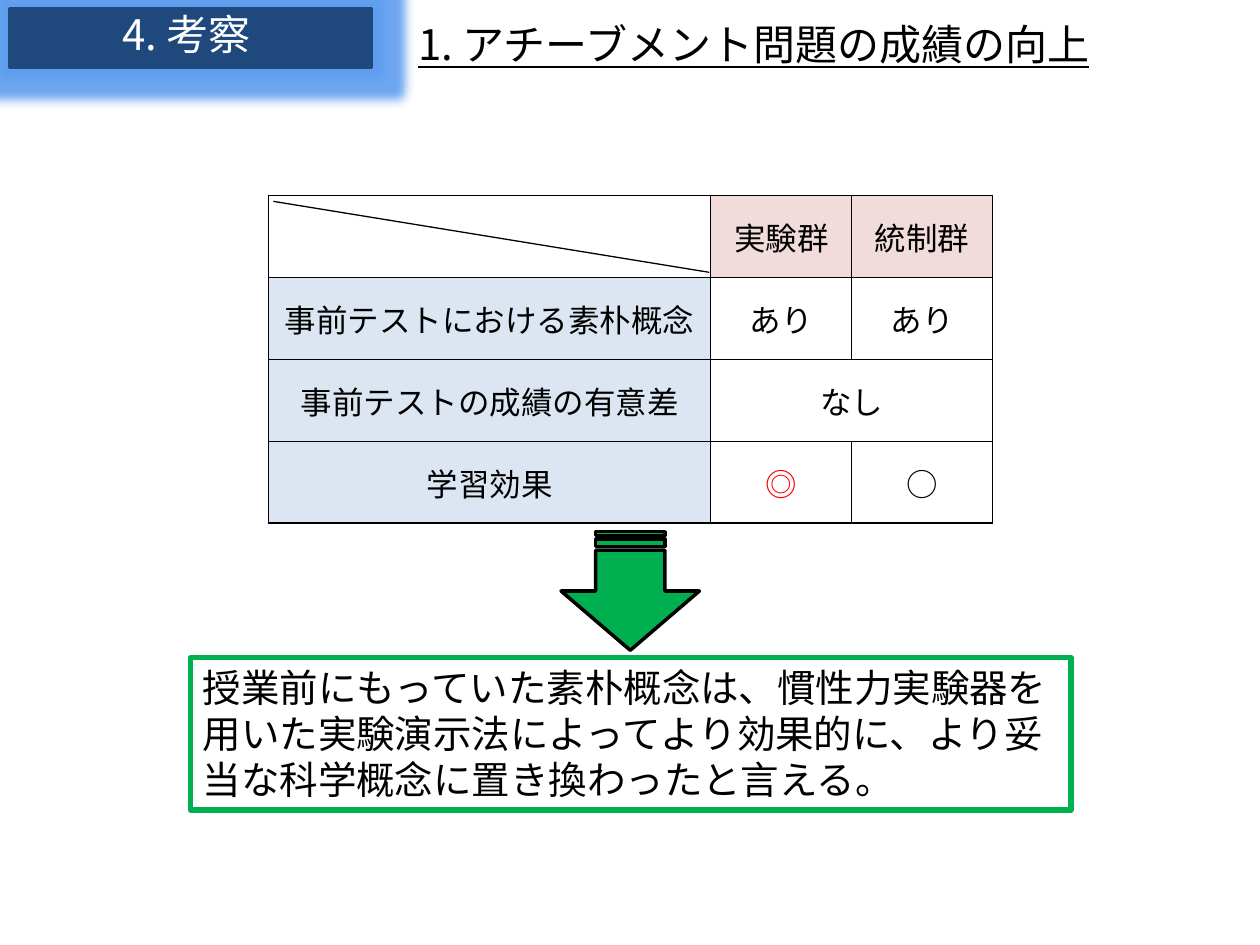
from dataclasses import dataclass
from typing import Any

from lxml.etree import SubElement
from pptx import Presentation
from pptx.dml.color import RGBColor
from pptx.enum.shapes import MSO_CONNECTOR, MSO_SHAPE
from pptx.enum.text import MSO_ANCHOR, MSO_AUTO_SIZE, PP_ALIGN
from pptx.oxml import parse_xml
from pptx.oxml.ns import nsdecls, qn
from pptx.util import Cm, Pt

FONT = "Noto Sans CJK JP"
BLACK, WHITE, RED = "000000", "FFFFFF", "FF0000"
NAVY, GLOW, GREEN = "1F497D", "5E9EEF", "00B050"
PINK, PALE_BLUE = "F2DCDB", "DCE6F2"
COLUMN_WIDTHS = (8.92, 2.84, 2.84)
ROW_HEIGHT = 1.65


@dataclass(frozen=True)
class Box:
    left: float
    top: float
    width: float
    height: float

    def lengths(self) -> tuple:
        return Cm(self.left), Cm(self.top), Cm(self.width), Cm(self.height)


@dataclass(frozen=True)
class TableCell:
    text: str = ""
    fill: str | None = None
    color: str = BLACK


TABLE_ROWS = (
    (TableCell(), TableCell("実験群", PINK), TableCell("統制群", PINK)),
    (TableCell("事前テストにおける素朴概念", PALE_BLUE), TableCell("あり"), TableCell("あり")),
    (TableCell("事前テストの成績の有意差", PALE_BLUE), TableCell("なし"), TableCell()),
    (TableCell("学習効果", PALE_BLUE), TableCell("◎", color=RED), TableCell("○")),
)


def rgb(color: str) -> RGBColor:
    return RGBColor.from_string(color)


def set_attributes(target: Any, values: dict[str, Any]) -> None:
    for name, value in values.items():
        setattr(target, name, value)


def write_text(frame: Any, lines: tuple[str, ...], size: float, color: str = BLACK,
               alignment: Any = PP_ALIGN.LEFT, underline: bool = False) -> None:
    for index, line in enumerate(lines):
        paragraph = frame.add_paragraph() if index else frame.paragraphs[0]
        paragraph.alignment = alignment
        run = paragraph.add_run()
        run.text = line
        set_attributes(run.font, {"name": FONT, "size": Pt(size), "underline": underline})
        run.font.color.rgb = rgb(color)
        SubElement(run.font._element, qn("a:ea")).set("typeface", FONT)


def add_shape(shapes: Any, kind: Any, box: Box, fill: str | None, line: str, width: float) -> Any:
    shape = shapes.add_shape(kind, *box.lengths())
    shape.shadow.inherit = False
    if fill:
        shape.fill.solid()
        shape.fill.fore_color.rgb = rgb(fill)
    else:
        shape.fill.background()
    shape.line.color.rgb = rgb(line)
    shape.line.width = Pt(width)
    return shape


def add_section_label(slide: Any, text: str) -> None:
    group = slide.shapes.add_group_shape()
    banner = add_shape(group.shapes, MSO_SHAPE.RECTANGLE, Box(0.2, 0.18, 7.29, 1.17), NAVY, NAVY, 2)
    effects = banner._element.spPr.find(qn("a:effectLst"))
    effects.append(parse_xml(
        f'<a:glow {nsdecls("a")} rad="{Pt(12)}"><a:srgbClr val="{GLOW}">'
        '<a:alpha val="90000"/></a:srgbClr></a:glow>'))
    label = group.shapes.add_textbox(*Box(0.3, 0.05, 6.91, 1.3).lengths())
    label.text_frame.word_wrap = True
    write_text(label.text_frame, (text,), 24, WHITE, PP_ALIGN.CENTER)


def add_heading(slide: Any, text: str) -> None:
    title = slide.shapes.title
    set_attributes(title, dict(zip(("left", "top", "width", "height"),
                                   Box(8.18, 0.25, 15.04, 1.27).lengths())))
    set_attributes(title.text_frame, {"word_wrap": True, "auto_size": MSO_AUTO_SIZE.NONE,
                                      "vertical_anchor": MSO_ANCHOR.TOP})
    write_text(title.text_frame, (text,), 24, underline=True)


def set_borders(cell: Any, widths: dict[str, float]) -> None:
    """Put the border lines ahead of the fill, as the schema requires."""
    properties = cell._tc.get_or_add_tcPr()
    for index, (side, width) in enumerate(widths.items()):
        properties.insert(index, parse_xml(
            f'<a:ln{side} {nsdecls("a")} w="{Pt(width)}"><a:solidFill>'
            f'<a:srgbClr val="{BLACK}"/></a:solidFill></a:ln{side}>'))


def add_comparison_table(slide: Any) -> None:
    row_count, column_count = len(TABLE_ROWS), len(COLUMN_WIDTHS)
    box = Box(5.41, 3.94, sum(COLUMN_WIDTHS), ROW_HEIGHT * row_count)
    table = slide.shapes.add_table(row_count, column_count, *box.lengths()).table
    set_attributes(table, {"first_row": False, "horz_banding": False})
    for column, width in zip(table.columns, COLUMN_WIDTHS):
        column.width = Cm(width)
    table.cell(2, 1).merge(table.cell(2, 2))
    for row, contents in enumerate(TABLE_ROWS):
        table.rows[row].height = Cm(ROW_HEIGHT)
        for column, content in enumerate(contents):
            cell = table.cell(row, column)
            if content.fill:
                cell.fill.solid()
                cell.fill.fore_color.rgb = rgb(content.fill)
            else:
                cell.fill.background()
            set_attributes(cell, {"vertical_anchor": MSO_ANCHOR.MIDDLE, "margin_left": Cm(0.03),
                                  "margin_top": Cm(0.03), "margin_right": Cm(0.03),
                                  "margin_bottom": 0})
            if content.text:
                write_text(cell.text_frame, (content.text,), 18, content.color, PP_ALIGN.CENTER)
            span = cell.span_width if cell.is_merge_origin else 1
            outer = {"L": column == 0, "R": column + span == column_count,
                     "T": row == 0, "B": row == row_count - 1}
            set_borders(cell, {side: 1 if edge else 0.5 for side, edge in outer.items()})


def add_diagonal(slide: Any) -> None:
    line = slide.shapes.add_connector(MSO_CONNECTOR.STRAIGHT, Cm(5.51), Cm(4.06), Cm(14.3), Cm(5.49))
    line.line.color.rgb = rgb(BLACK)
    line.line.width = Pt(0.75)
    SubElement(line._element.spPr, qn("a:effectLst"))


def add_conclusion(slide: Any, lines: tuple[str, ...]) -> None:
    arrow = add_shape(slide.shapes, MSO_SHAPE.STRIPED_RIGHT_ARROW,
                      Box(11.51, 10.52, 2.39, 2.79), GREEN, BLACK, 2)
    arrow.rotation = 90
    frame = add_shape(slide.shapes, MSO_SHAPE.RECTANGLE,
                      Box(3.84, 13.26, 17.75, 3.07), None, GREEN, 3).text_frame
    set_attributes(frame, {"word_wrap": False, "vertical_anchor": MSO_ANCHOR.TOP})
    write_text(frame, lines, 22)


def main() -> None:
    presentation = Presentation()
    set_attributes(presentation, {"slide_width": Cm(25.4), "slide_height": Cm(19.05)})
    slide = presentation.slides.add_slide(presentation.slide_layouts[5])
    add_heading(slide, "1. アチーブメント問題の成績の向上")
    add_comparison_table(slide)
    add_section_label(slide, "4. 考察")
    add_diagonal(slide)
    add_conclusion(slide, ("授業前にもっていた素朴概念は、慣性力実験器を",
                           "用いた実験演示法によってより効果的に、より妥",
                           "当な科学概念に置き換わったと言える。"))
    presentation.save("out.pptx")


if __name__ == "__main__":
    main()
